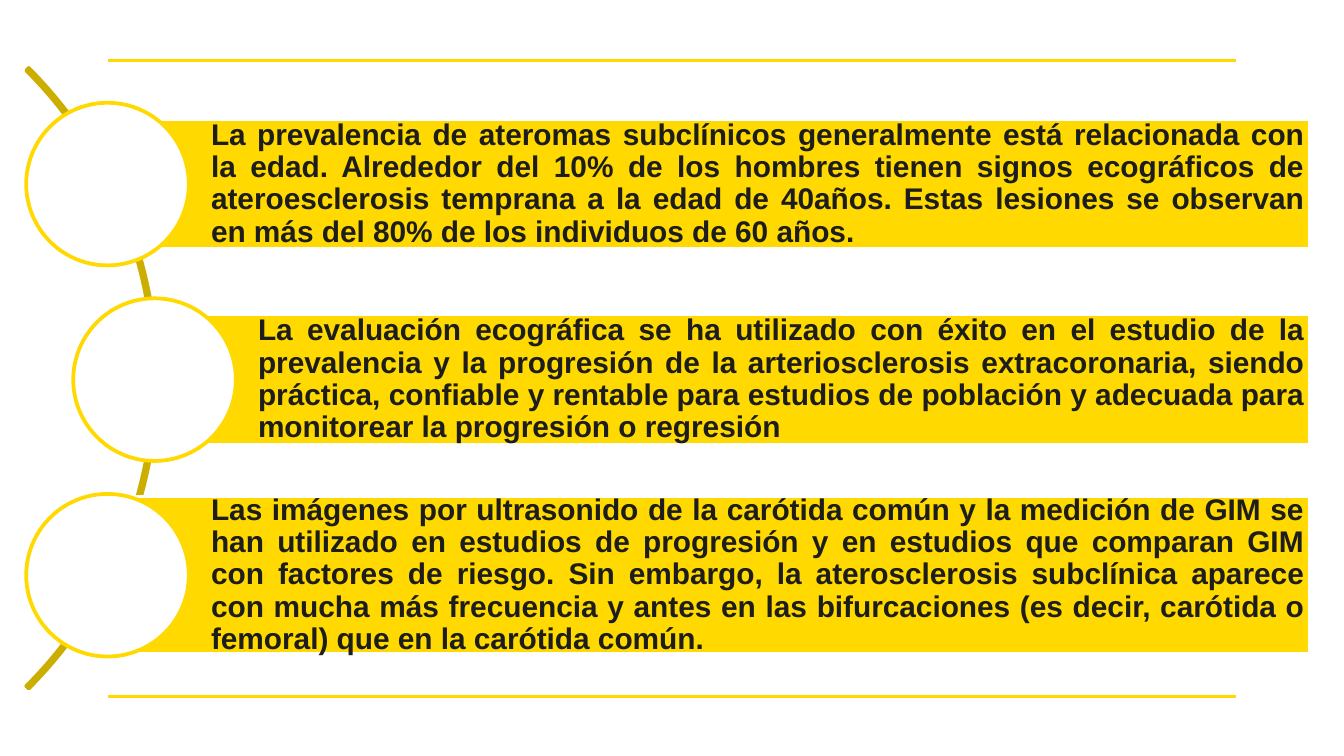
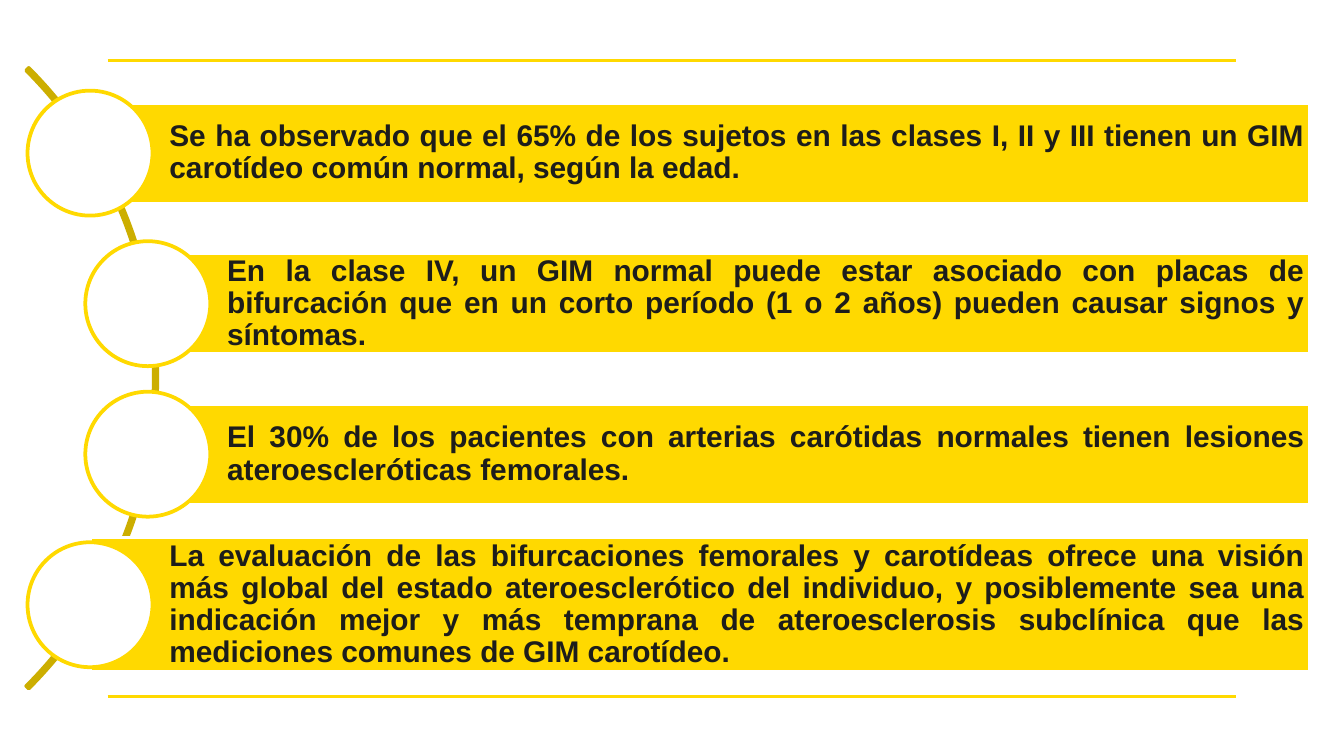
"""Build two slides of yellow text bars set along an arc."""
from dataclasses import dataclass

from lxml import etree
from pptx import Presentation
from pptx.dml.color import RGBColor
from pptx.enum.shapes import MSO_CONNECTOR, MSO_SHAPE
from pptx.enum.text import MSO_ANCHOR, PP_ALIGN
from pptx.oxml.ns import qn
from pptx.shapes.autoshape import Shape
from pptx.slide import Slide
from pptx.util import Inches, Pt

ARC = MSO_SHAPE.BLOCK_ARC
BAR = MSO_SHAPE.RECTANGLE
DISC = MSO_SHAPE.OVAL
LINE = MSO_CONNECTOR.STRAIGHT
MIDDLE = MSO_ANCHOR.MIDDLE
JUSTIFY = PP_ALIGN.JUSTIFY

COLORS = {"gold": "FFD900", "dark": "CCAE00", "white": "FFFFFF", "ink": "1D1D1B"}
FONT = "Arial"
WIDTH = Inches(10)
HEIGHT = WIDTH * 9 // 16
RIGHT = 9.75
RULES = (5.18, 0.45)


@dataclass(frozen=True)
class Item:
    """One bar: left edge, height and text."""
    left: float
    high: float
    text: str


@dataclass(frozen=True)
class Page:
    """One slide: first and last centre, disc size, text inset and bars."""
    first: float
    last: float
    disc: float
    inset: float
    items: tuple[Item, ...]


PAGES = (
    Page(1.37, 4.28, 1.21, 0.77, (
        Item(0.8, 0.97, "La prevalencia de ateromas subclínicos generalmente está "
             "relacionada con la edad. Alrededor del 10% de los hombres tienen signos "
             "ecográficos de ateroesclerosis temprana a la edad de 40años. Estas "
             "lesiones se observan en más del 80% de los individuos de 60 años."),
        Item(1.15, 0.97, "La evaluación ecográfica se ha utilizado con éxito en el "
             "estudio de la prevalencia y la progresión de la arteriosclerosis "
             "extracoronaria, siendo práctica, confiable y rentable para estudios de "
             "población y adecuada para monitorear la progresión o regresión"),
        Item(0.8, 1.17, "Las imágenes por ultrasonido de la carótida común y la "
             "medición de GIM se han utilizado en estudios de progresión y en estudios "
             "que comparan GIM con factores de riesgo. Sin embargo, la aterosclerosis "
             "subclínica aparece con mucha más frecuencia y antes en las bifurcaciones "
             "(es decir, carótida o femoral) que en la carótida común."),
    )),
    Page(1.14, 4.5, 0.93, 0.59, (
        Item(0.67, 0.75, "Se ha observado que el 65% de los sujetos en las clases I, II "
             "y III tienen un GIM carotídeo común normal, según la edad."),
        Item(1.1, 0.75, "En la clase IV, un GIM normal puede estar asociado con placas "
             "de bifurcación que en un corto período (1 o 2 años) pueden causar signos "
             "y síntomas."),
        Item(1.1, 0.75, "El 30% de los pacientes con arterias carótidas normales tienen "
             "lesiones ateroescleróticas femorales."),
        Item(0.67, 1.0, "La evaluación de las bifurcaciones femorales y carotídeas "
             "ofrece una visión más global del estado ateroesclerótico del individuo, "
             "y posiblemente sea una indicación mejor y más temprana de ateroesclerosis "
             "subclínica que las mediciones comunes de GIM carotídeo."),
    )),
)


def color(name: str) -> RGBColor:
    return RGBColor.from_string(COLORS[name])


def add_form(slide: Slide, kind: int, box: tuple[float, ...], line: str,
             fill: str | None = None) -> Shape:
    form = slide.shapes.add_shape(kind, *(Inches(n) for n in box))
    form.shadow.inherit = False
    form.line.color.rgb = color(line)
    form.line.width = Pt(2)
    if fill:
        form.fill.solid()
        form.fill.fore_color.rgb = color(fill)
    else:
        form.fill.background()
    return form


def write(form: Shape, text: str, *, inset: float, size: float = 16,
          bold: bool = True, ink: str = "ink") -> None:
    frame = form.text_frame
    frame.word_wrap = True
    frame.vertical_anchor = MIDDLE
    frame.margin_left = Inches(inset)
    frame.margin_top = frame.margin_right = frame.margin_bottom = Inches(0.04)
    para = frame.paragraphs[0]
    para.alignment = JUSTIFY
    para.line_spacing = 0.9
    run = para.add_run()
    run.text = text
    run.font.name = FONT
    run.font.size = Pt(size)
    run.font.bold = bold
    run.font.color.rgb = color(ink)


def add_frame(slide: Slide) -> None:
    for y in RULES:
        rule = slide.shapes.add_connector(
            LINE, Inches(0.8), Inches(y), Inches(9.2), Inches(y))
        rule.line.color.rgb = color("gold")
        rule.line.width = Pt(1.5)
        etree.SubElement(rule.element.spPr, qn("a:effectLst"))
    arc = add_form(slide, ARC, (-5.36, -0.45, 6.53, 6.53), "dark")
    for i, value in enumerate((189, 27, 0.004)):
        arc.adjustments[i] = value


def add_item(slide: Slide, page: Page, item: Item, mid: float) -> None:
    box = (item.left, mid - item.high / 2, RIGHT - item.left, item.high)
    bar = add_form(slide, BAR, box, "white", "gold")
    write(bar, item.text, inset=page.inset)
    half = page.disc / 2
    add_form(slide, DISC, (item.left - half, mid - half, page.disc, page.disc),
             "gold", "white")


def main() -> None:
    deck = Presentation()
    deck.slide_width, deck.slide_height = WIDTH, HEIGHT
    for page in PAGES:
        slide = deck.slides.add_slide(deck.slide_layouts[6])
        add_frame(slide)
        step = (page.last - page.first) / (len(page.items) - 1)
        for i, item in enumerate(page.items):
            add_item(slide, page, item, page.first + i * step)
    deck.save("out.pptx")


if __name__ == "__main__":
    main()
